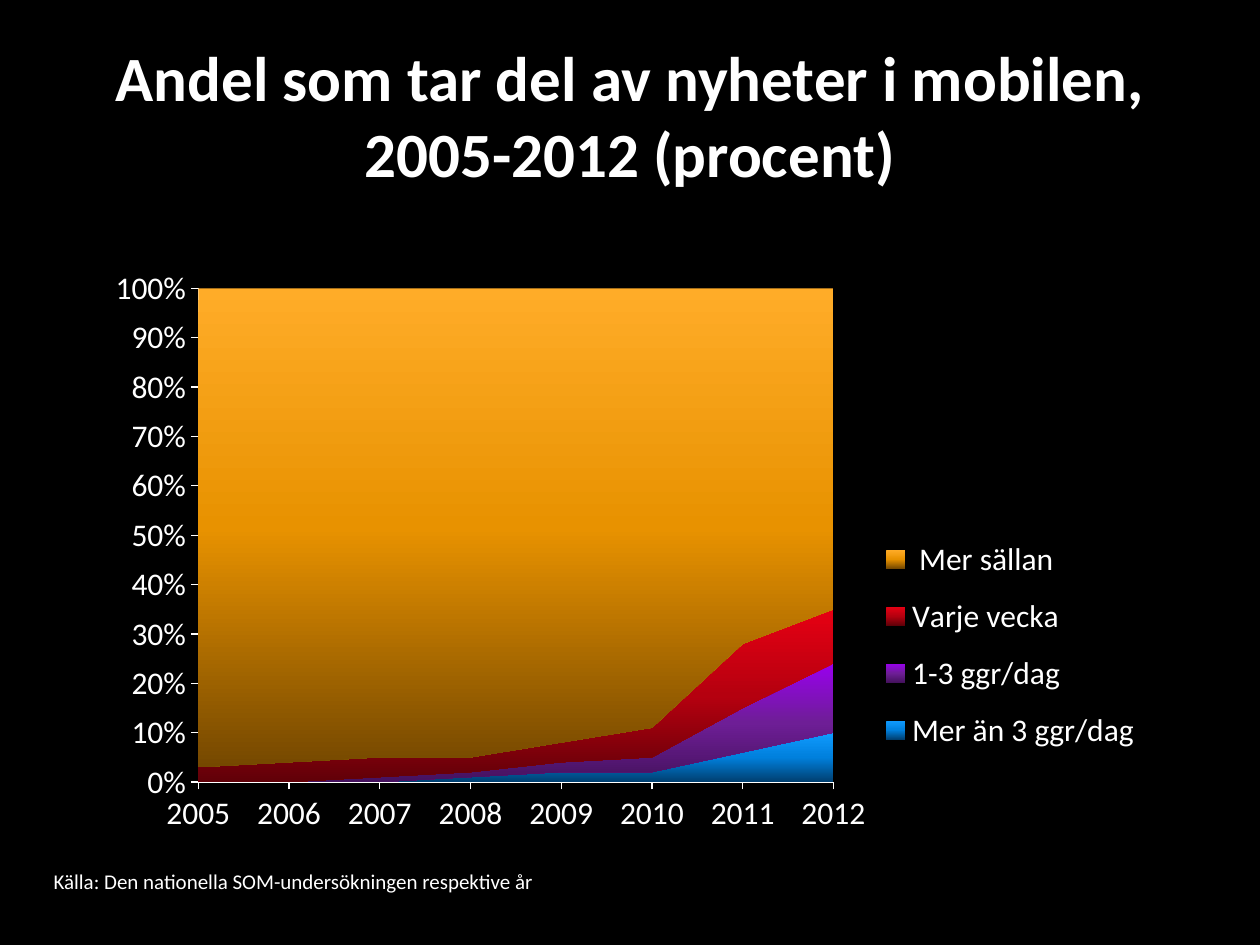
from copy import deepcopy
from dataclasses import dataclass

from lxml import etree
from pptx import Presentation
from pptx.chart.data import CategoryChartData
from pptx.dml.color import RGBColor
from pptx.enum.chart import XL_CHART_TYPE, XL_LEGEND_POSITION, XL_TICK_MARK
from pptx.enum.text import MSO_ANCHOR, PP_ALIGN
from pptx.oxml.ns import qn
from pptx.util import Pt

AREA_STACKED_100 = XL_CHART_TYPE.AREA_STACKED_100
LEGEND_RIGHT = XL_LEGEND_POSITION.RIGHT
TICK_OUTSIDE, TICK_NONE = XL_TICK_MARK.OUTSIDE, XL_TICK_MARK.NONE
MIDDLE, TOP = MSO_ANCHOR.MIDDLE, MSO_ANCHOR.TOP
CENTER, LEFT = PP_ALIGN.CENTER, PP_ALIGN.LEFT


@dataclass(frozen=True)
class Theme:
    font: str = "Calibri"
    background: str = "000000"
    text: str = "FFFFFF"
    title_size: int = 36
    chart_size: int = 18
    source_size: int = 12


THEME = Theme()
YEARS = [str(year) for year in range(2005, 2013)]
# Name, values by year, gradient colours from top to bottom
SERIES = [
    ("Mer än 3 ggr/dag", (None, None, None, 1, 2, 2, 6, 10),
     ("109BFF", "0080DD", "003F70")),
    ("1-3 ggr/dag", (None, None, 1, 1, 2, 3, 9, 14),
     ("9900EE", "6E1E96", "45125E")),
    ("Varje vecka", (3, 4, 4, 3, 4, 6, 13, 11),
     ("E60013", "B5000F", "600008")),
    (" Mer sällan", (97, 96, 95, 95, 92, 89, 72, 65),
     ("FFAC28", "E89200", "754800")),
]


def rgb(value):
    return RGBColor.from_string(value)


def format_font(font, size, bold=False):
    font.name = THEME.font
    font.size = Pt(size)
    font.bold = bold
    font.color.rgb = rgb(THEME.text)


def write_text(shape, text, size, bold=False, align=LEFT, anchor=TOP):
    frame = shape.text_frame
    frame.word_wrap = True
    frame.vertical_anchor = anchor
    paragraph = frame.paragraphs[0]
    paragraph.alignment = align
    run = paragraph.add_run()
    run.text = text
    format_font(run.font, size, bold)


def add_title(slide, text):
    title = slide.shapes.title
    title.left, title.top, title.width, title.height = Pt(54), Pt(9.5), Pt(612), Pt(112)
    write_text(title, text, THEME.title_size, bold=True, align=CENTER, anchor=MIDDLE)


def fill_gradient(series, colors):
    """Fill a series from top to bottom with evenly spaced colours."""
    fill = series.format.fill
    fill.gradient()
    fill.gradient_angle = 270
    stop_list = next(series._element.iter(qn("a:gsLst")))
    while len(stop_list) < len(colors):
        stop_list.append(deepcopy(stop_list[0]))
    for index, (stop, color) in enumerate(zip(fill.gradient_stops, colors)):
        stop.position = index / (len(colors) - 1)
        stop.color.rgb = rgb(color)


def make_layout(x, y, w, h, inner=False):
    """Return a manual chart layout in fractions of the chart frame."""
    layout = etree.Element(qn("c:layout"))
    manual = etree.SubElement(layout, qn("c:manualLayout"))
    settings = [("layoutTarget", "inner")] if inner else []
    settings += [("xMode", "edge"), ("yMode", "edge"),
                 ("x", x), ("y", y), ("w", w), ("h", h)]
    for name, value in settings:
        etree.SubElement(manual, qn(f"c:{name}")).set("val", str(value))
    return layout


def remove_layout(element):
    for layout in element.findall(qn("c:layout")):
        element.remove(layout)


def format_axis(axis):
    axis.major_tick_mark = TICK_OUTSIDE
    axis.minor_tick_mark = TICK_NONE
    axis.format.line.color.rgb = rgb(THEME.text)
    axis.format.line.width = Pt(0.75)
    format_font(axis.tick_labels.font, THEME.chart_size)


def format_legend(chart):
    chart.has_legend = True
    legend = chart.legend
    legend.position = LEGEND_RIGHT
    legend.include_in_layout = False
    format_font(legend.font, THEME.chart_size)
    remove_layout(legend._element)
    legend._element.find(qn("c:legendPos")).addnext(
        make_layout(0.72, 0.45, 0.27, 0.42))


def add_news_chart(slide):
    data = CategoryChartData(number_format="General")
    data.categories = YEARS
    for name, values, _ in SERIES:
        data.add_series(name, values)
    chart = slide.shapes.add_chart(
        AREA_STACKED_100, Pt(54), Pt(147), Pt(612), Pt(335.5), data).chart
    chart.has_title = False
    format_font(chart.font, THEME.chart_size)
    for series, (_, _, colors) in zip(chart.plots[0].series, SERIES):
        fill_gradient(series, colors)

    for axis in (chart.category_axis, chart.value_axis):
        format_axis(axis)
    value_axis = chart.value_axis
    value_axis.minimum_scale, value_axis.maximum_scale = 0, 1
    value_axis.major_unit = 0.1
    value_axis.has_major_gridlines = True
    value_axis.major_gridlines.format.line.color.rgb = rgb(THEME.background)
    value_axis.tick_labels.number_format = "0%"
    value_axis.tick_labels.number_format_is_linked = False
    value_axis._element.find(qn("c:crossBetween")).set("val", "midCat")

    plot_area = chart._chartSpace.chart.plotArea
    remove_layout(plot_area)
    plot_area.insert(0, make_layout(0.097, 0.053, 0.593, 0.841, inner=True))
    format_legend(chart)


def add_source(slide, text):
    box = slide.shapes.add_textbox(Pt(23.5), Pt(493), Pt(683), Pt(22))
    write_text(box, text, THEME.source_size)


def main():
    presentation = Presentation()
    presentation.slide_width, presentation.slide_height = Pt(720), Pt(540)
    slide = presentation.slides.add_slide(presentation.slide_layouts[5])
    background = slide.background.fill
    background.solid()
    background.fore_color.rgb = rgb(THEME.background)
    add_title(slide, "Andel som tar del av nyheter i mobilen, 2005-2012 (procent)")
    add_news_chart(slide)
    add_source(slide, "Källa: Den nationella SOM-undersökningen respektive år")
    presentation.save("out.pptx")


if __name__ == "__main__":
    main()
